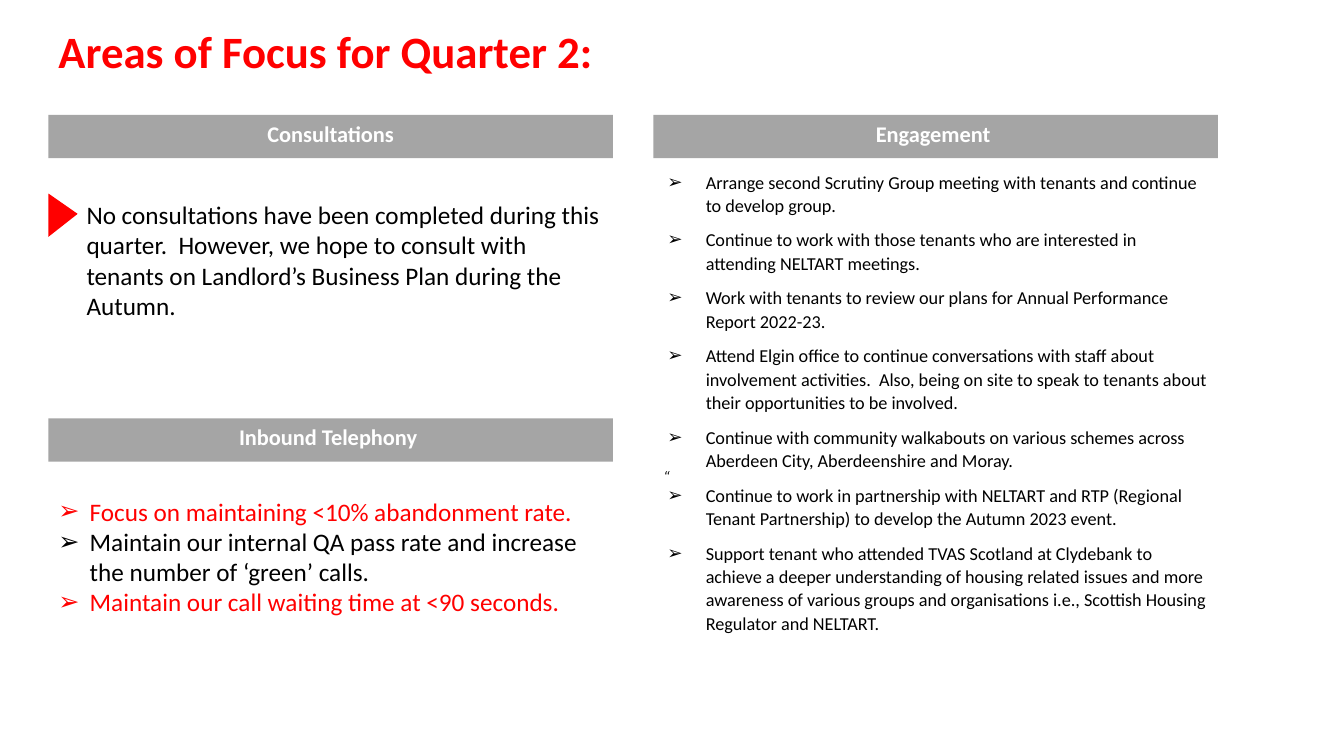
from lxml.etree import SubElement
from pptx import Presentation
from pptx.dml.color import RGBColor
from pptx.enum.shapes import MSO_SHAPE
from pptx.enum.text import MSO_ANCHOR, MSO_AUTO_SIZE, PP_ALIGN
from pptx.oxml.ns import qn
from pptx.util import Inches, Pt

COLORS = {"red": "FF0000", "grey": "A5A5A5", "black": "000000", "white": "FFFFFF"}
BAR_SIZE = (5.6, 0.43)
LEFT, RIGHT = 0.48, 6.48
TOP, MIDDLE = 1.14, 4.15

BARS = [
    ("Consultations", LEFT, TOP),
    ("Engagement ", RIGHT, TOP),
    ("Inbound Telephony ", LEFT, MIDDLE),
]
CONSULTATION = (
    "No consultations have been completed during this quarter.  However, we hope "
    "to consult with tenants on Landlord’s Business Plan during the Autumn."
)
ENGAGEMENT = [
    "Arrange second Scrutiny Group meeting with tenants and continue to develop group.",
    "Continue to work with those tenants who are interested in attending NELTART meetings.",
    "Work with tenants to review our plans for Annual Performance Report 2022-23.",
    "Attend Elgin office to continue conversations with staff about involvement "
    "activities.  Also, being on site to speak to tenants about their opportunities "
    "to be involved.",
    "Continue with community walkabouts on various schemes across Aberdeen City, "
    "Aberdeenshire and Moray.",
    "Continue to work in partnership with NELTART and RTP (Regional Tenant Partnership) "
    "to develop the Autumn 2023 event.",
    "Support tenant who attended TVAS Scotland at Clydebank to achieve a deeper "
    "understanding of housing related issues and more awareness of various groups and "
    "organisations i.e., Scottish Housing Regulator and NELTART.",
]
TELEPHONY = [
    ("Focus on maintaining <10% abandonment rate.", "red"),
    ("Maintain our internal QA pass rate and increase the number of ‘green’ calls.", "black"),
    ("Maintain our call waiting time at <90 seconds.", "red"),
]


def place(sp, left, top, width, height):
    """Move and size a shape in inches."""
    box = {"left": left, "top": top, "width": width, "height": height}
    for name, value in box.items():
        setattr(sp, name, Inches(value))


def write(p, text, size, color="black", **fmt):
    """Add a formatted run to a paragraph."""
    r = p.add_run()
    r.text = text
    for name, value in {"name": "Calibri", "size": Pt(size), **fmt}.items():
        setattr(r.font, name, value)
    r.font.color.rgb = RGBColor.from_string(COLORS[color])


def add_shape(s, kind, box, color):
    """Add a plain filled shape without line or shadow."""
    sp = s.shapes.add_shape(kind, *map(Inches, box))
    sp.shadow.inherit = False
    sp.fill.solid()
    sp.fill.fore_color.rgb = RGBColor.from_string(COLORS[color])
    sp.line.fill.background()
    return sp


def add_bar(s, text, left, top):
    """Add a grey section heading bar."""
    sp = add_shape(s, MSO_SHAPE.RECTANGLE, (left, top, *BAR_SIZE), "grey")
    tf = sp.text_frame
    tf.vertical_anchor = MSO_ANCHOR.TOP
    p = tf.paragraphs[0]
    p.alignment = PP_ALIGN.CENTER
    write(p, text, 16, "white", bold=True)


def add_text(s, box, text, size, **fmt):
    """Add a wrapping text box with one paragraph."""
    tf = s.shapes.add_textbox(*map(Inches, box)).text_frame
    tf.word_wrap = True
    write(tf.paragraphs[0], text, size, **fmt)


def fill_list(sp, box, items, size, indent, **spacing):
    """Fill a body placeholder with arrow-bulleted items."""
    place(sp, *box)
    tf = sp.text_frame
    tf.auto_size = MSO_AUTO_SIZE.NONE
    for i, (text, color) in enumerate(items):
        p = tf.add_paragraph() if i else tf.paragraphs[0]
        for name, value in {"space_before": Pt(0), **spacing}.items():
            setattr(p, name, value)
        pPr = p._p.get_or_add_pPr()
        pPr.set("marL", str(Inches(indent)))
        pPr.set("indent", str(-Inches(indent)))
        SubElement(pPr, qn("a:buChar")).set("char", "➢")
        write(p, text, size, color)


def fill_title(sp, text):
    """Format the title placeholder."""
    place(sp, LEFT, 0.28, 11.75, 0.51)
    tf = sp.text_frame
    tf.auto_size = MSO_AUTO_SIZE.NONE
    tf.vertical_anchor = MSO_ANCHOR.MIDDLE
    p = tf.paragraphs[0]
    p.alignment = PP_ALIGN.LEFT
    p.line_spacing = 0.9
    write(p, text, 32, "red", bold=True)


def main():
    """Build and save the slide."""
    prs = Presentation()
    prs.slide_width, prs.slide_height = Inches(13.33), Inches(7.5)
    s = prs.slides.add_slide(prs.slide_layouts[3])
    title, engagement, telephony = s.placeholders

    fill_title(title, "Areas of Focus for Quarter 2:")
    for bar in BARS:
        add_bar(s, *bar)
    add_text(s, (0.76, 1.93, 5.32, 1.31), CONSULTATION, 18)
    add_text(s, (RIGHT, 4.58, 6.55, 0.29), "“", 11, italic=True)
    marker = add_shape(s, MSO_SHAPE.ISOSCELES_TRIANGLE, (0.41, 1.99, 0.43, 0.29), "red")
    marker.adjustments[0] = 0.47
    marker.rotation = 90

    fill_list(engagement, (6.52, 1.63, 5.55, 5.17),
              [(text, "black") for text in ENGAGEMENT], 13, 0.38,
              line_spacing=1.07, space_after=Pt(8))
    fill_list(telephony, (LEFT, 4.87, 5.6, 1.62), TELEPHONY, 18, 0.31)
    prs.save("out.pptx")


if __name__ == "__main__":
    main()
